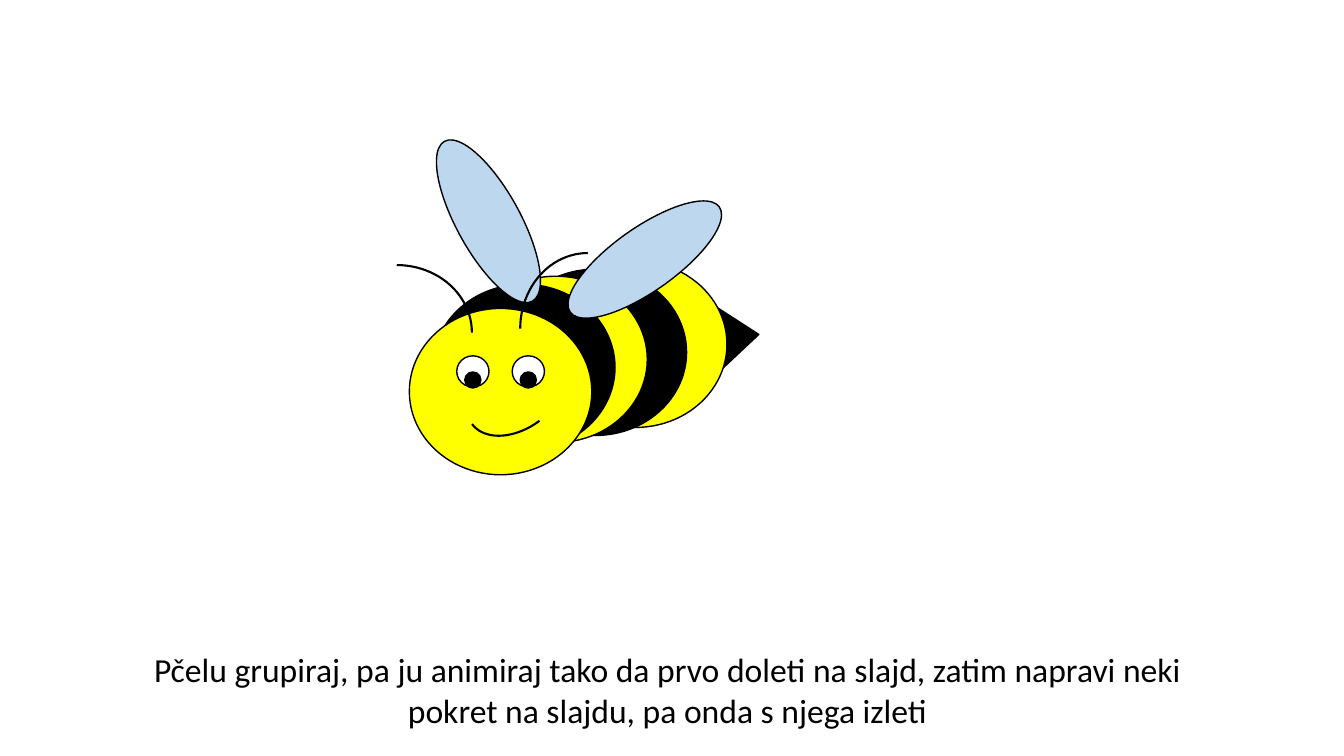
from typing import NamedTuple

from pptx import Presentation
from pptx.dml.color import RGBColor
from pptx.enum.shapes import MSO_SHAPE as Preset
from pptx.enum.text import MSO_AUTO_SIZE as AutoSize, PP_ALIGN as Align
from pptx.util import Emu, Pt

EMU_PER_PX = 9144  # 100 px to the inch
SLIDE_SIZE = (1333, 750)
BLANK_LAYOUT = 6

BLACK = "000000"
YELLOW = "FFFF00"
WHITE = "FFFFFF"
WING_BLUE = "BDD7EE"


class Part(NamedTuple):
    left: int
    top: int
    width: int
    height: int
    fill: str | None = None
    rotation: float = 0
    preset: Preset = Preset.OVAL
    line_width: float = 1


def px(length: int) -> Emu:
    return Emu(length * EMU_PER_PX)


def rgb(hex_colour: str) -> RGBColor:
    return RGBColor.from_string(hex_colour)


def antenna_or_mouth(left: int, top: int, width: int, height: int,
                     rotation: float = 0) -> Part:
    return Part(left, top, width, height, rotation=rotation,
                preset=Preset.ARC, line_width=1.5)


def draw_part(slide, part: Part) -> None:
    shape = slide.shapes.add_shape(
        part.preset, px(part.left), px(part.top), px(part.width), px(part.height))
    shape.rotation = part.rotation
    shape.shadow.inherit = False
    if part.fill is None:
        shape.fill.background()
    else:
        shape.fill.solid()
        shape.fill.fore_color.rgb = rgb(part.fill)
    shape.line.color.rgb = rgb(BLACK)
    shape.line.width = Pt(part.line_width)


def add_text(slide, text: str, left: int, top: int, width: int, height: int, *,
             size: float, font: str = "Calibri", colour: str = BLACK,
             align: Align = Align.CENTER) -> None:
    frame = slide.shapes.add_textbox(
        px(left), px(top), px(width), px(height)).text_frame
    frame.word_wrap = True
    frame.auto_size = AutoSize.SHAPE_TO_FIT_TEXT
    paragraph = frame.paragraphs[0]
    paragraph.alignment = align
    run = paragraph.add_run()
    run.text = text
    run.font.name = font
    run.font.size = Pt(size)
    run.font.color.rgb = rgb(colour)


STING = Part(587, 283, 150, 102, BLACK, 212.8, Preset.PARALLELOGRAM)

# Tail to head, alternating yellow and black
SEGMENT_CORNERS = [(540, 259), (500, 267), (461, 274), (429, 282), (406, 306)]
BODY = [Part(left, top, 181, 165, (YELLOW, BLACK)[index % 2])
        for index, (left, top) in enumerate(SEGMENT_CORNERS)]

WINGS = [Part(left, top, 63, 181, WING_BLUE, rotation)
         for left, top, rotation in [(453, 129, 331.2), (608, 167, 54.8)]]

EYE_LEFTS = (453, 508)
EYES = [Part(left, 353, 32, 31, WHITE) for left in EYE_LEFTS]
PUPILS = [Part(left + 8, 369, 16, 16, BLACK) for left in EYE_LEFTS]

MOUTH = antenna_or_mouth(457, 350, 111, 75, 143.1)
ANTENNAE = [antenna_or_mouth(508, 259, 150, 134, 270),
            antenna_or_mouth(319, 263, 149, 134)]

BEE = [STING, *BODY, *WINGS, *EYES, *PUPILS, MOUTH, *ANTENNAE]

INSTRUCTION = ("Pčelu grupiraj, pa ju animiraj tako da prvo doleti na slajd, "
               "zatim napravi neki pokret na slajdu, pa onda s njega izleti")


def main() -> None:
    presentation = Presentation()
    presentation.slide_width, presentation.slide_height = map(px, SLIDE_SIZE)
    slide = presentation.slides.add_slide(presentation.slide_layouts[BLANK_LAYOUT])
    for part in BEE:
        draw_part(slide, part)
    add_text(slide, INSTRUCTION, 130, 639, 1064, 91, size=24)
    presentation.save("out.pptx")


if __name__ == "__main__":
    main()
